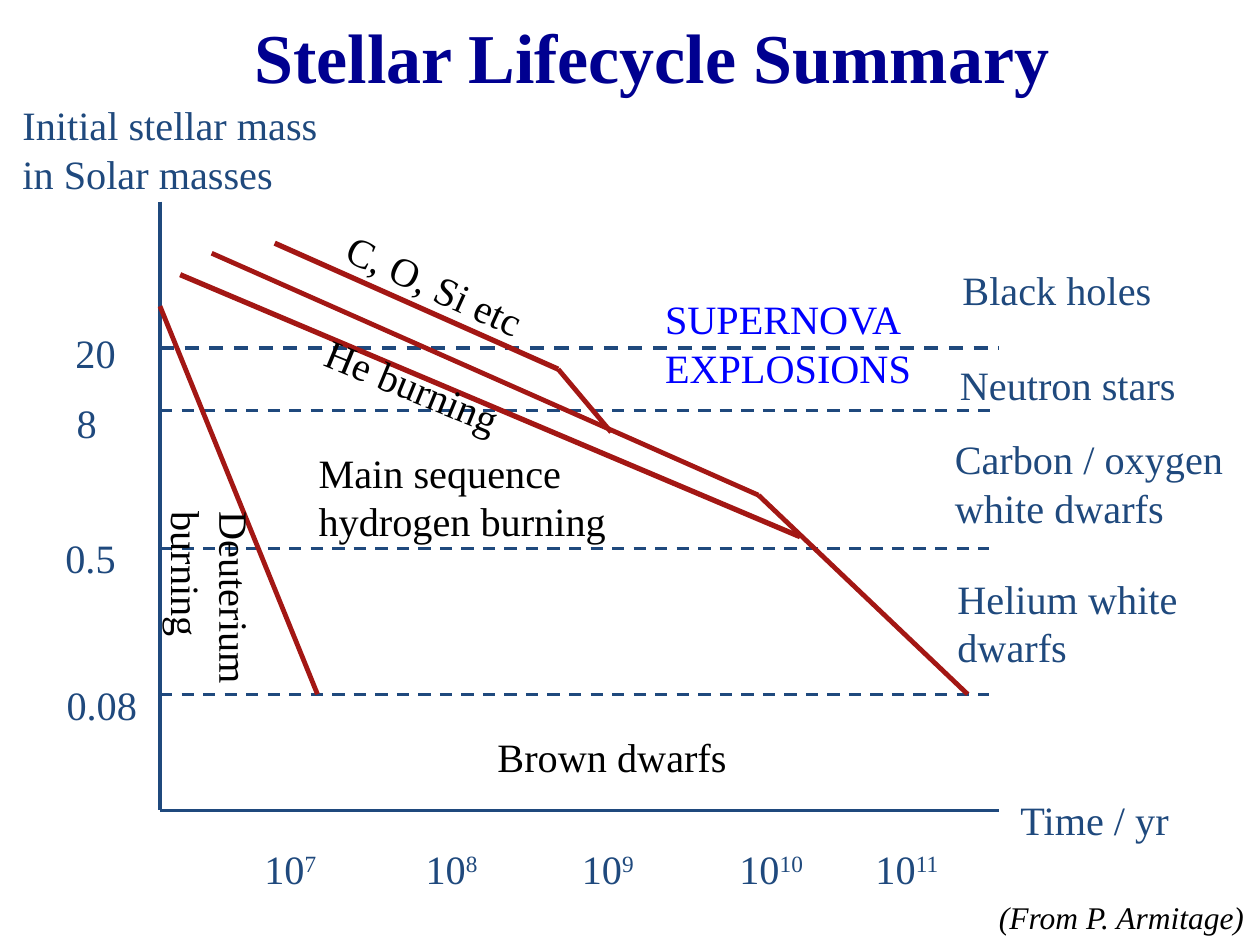
import lxml.etree
import pptx
import pptx.dml.color
import pptx.enum.dml
import pptx.enum.shapes
import pptx.enum.text
import pptx.oxml.ns
import pptx.util

Inches = pptx.util.Inches
FONT = "Times New Roman"
NAVY, BLUE, RED = "000090", "1F497D", "A31714"
BLACK, BRIGHT_BLUE = "000000", "0000FF"
AXIS_LEFT, AXIS_TOP, AXIS_BOTTOM, AXIS_RIGHT = 1.27, 1.6, 6.43, 7.93
LINE_HEIGHT, TWO_LINES = 0.49, 0.88

# label, left, top, width, y and right end of the dashed line, line width
MASS_LIMITS = [
    ("0.08", 0.43, 5.35, 0.77, 5.51, 7.85, 1.75),
    ("0.5", 0.42, 4.18, 0.61, 4.35, 7.85, 1.75),
    ("8", 0.51, 3.11, 0.36, 3.26, AXIS_RIGHT, 1.75),
    ("20", 0.5, 2.56, 0.52, 2.76, AXIS_RIGHT, 2),
]
# exponent of the year, left, width
TIME_TICKS = [("7", 2, 0.64), ("8", 3.28, 0.63), ("9", 4.52, 0.63),
              ("10", 5.77, 0.74), ("11", 6.85, 0.73)]
# start, end, line width
BURNING_LIMITS = [
    ((2.52, 5.51), (AXIS_LEFT, 2.43), 2.75),
    ((7.68, 5.51), (6.02, 3.93), 2.75),
    ((6.35, 4.26), (1.43, 2.18), 3),
    ((6.02, 3.93), (1.68, 2.01), 2.75),
    ((4.85, 3.43), (4.43, 2.93), 2.75),
    ((4.43, 2.93), (2.18, 1.93), 3),
]
# text, left, top, width, height, colour, rotation
LABELS = [
    ("Brown dwarfs", 3.85, 5.76, 2.04, LINE_HEIGHT, BLACK, 0),
    ("Deuterium\nburning", 0.88, 4.31, 1.58, TWO_LINES, BLACK, 90),
    ("Main sequence\nhydrogen burning", 2.43, 3.51, 2.5, TWO_LINES, BLACK, 0),
    ("He burning", 2.45, 2.82, 1.66, LINE_HEIGHT, BLACK, 22.3),
    ("C, O, Si etc", 2.61, 2.02, 1.7, LINE_HEIGHT, BLACK, 24.4),
    ("Carbon / oxygen\nwhite dwarfs", 7.48, 3.4, 2.36, TWO_LINES, BLUE, 0),
    ("Helium white\ndwarfs", 7.5, 4.51, 1.97, TWO_LINES, BLUE, 0),
    ("Neutron stars", 7.52, 2.81, 1.93, LINE_HEIGHT, BLUE, 0),
    ("Black holes", 7.54, 2.06, 1.72, LINE_HEIGHT, BLUE, 0),
    ("Initial stellar mass\nin Solar masses", 0.08, 0.75, 2.57, TWO_LINES, BLUE, 0),
    ("Time / yr", 8, 6.26, 1.39, LINE_HEIGHT, BLUE, 0),
    ("SUPERNOVA\vEXPLOSIONS", 5.18, 2.29, 2.17, TWO_LINES, BRIGHT_BLUE, 0),
]


def rgb(colour):
    return pptx.dml.color.RGBColor.from_string(colour)


def format_text(text_frame, size, colour, bold=False, italic=False):
    text_frame.word_wrap = False
    text_frame.auto_size = pptx.enum.text.MSO_AUTO_SIZE.SHAPE_TO_FIT_TEXT
    text_frame.vertical_anchor = pptx.enum.text.MSO_ANCHOR.TOP
    for paragraph in text_frame.paragraphs:
        paragraph.alignment = pptx.enum.text.PP_ALIGN.LEFT
        for run in paragraph.runs:
            run.font.name = FONT
            run.font.size = pptx.util.Pt(size)
            run.font.bold = bold
            run.font.italic = italic
            run.font.color.rgb = rgb(colour)


def add_title(slide, text):
    title = slide.shapes.title
    title.left, title.top = Inches(1.92), Inches(0.06)
    title.width, title.height = Inches(6.58), Inches(0.77)
    title.text_frame.text = text
    format_text(title.text_frame, 40, NAVY, bold=True)


def add_label(slide, text, left, top, width, height=LINE_HEIGHT, colour=BLUE,
              rotation=0, size=23, italic=False):
    label = slide.shapes.add_textbox(Inches(left), Inches(top), Inches(width), Inches(height))
    label.rotation = rotation
    label.text_frame.text = text
    format_text(label.text_frame, size, colour, italic=italic)
    return label


def add_power_of_ten(slide, exponent, left, width):
    label = add_label(slide, "10", left, 6.65, width)
    superscript = label.text_frame.paragraphs[0].add_run()
    superscript.text = exponent
    format_text(label.text_frame, 23, BLUE)
    superscript.font._element.set("baseline", "30000")


def add_line(slide, start, end, colour, width, dashed=False):
    line = slide.shapes.add_connector(
        pptx.enum.shapes.MSO_CONNECTOR.STRAIGHT,
        *(Inches(coordinate) for coordinate in start + end))
    line.line.color.rgb = rgb(colour)
    line.line.width = pptx.util.Pt(width)
    if dashed:
        line.line.dash_style = pptx.enum.dml.MSO_LINE.DASH
    lxml.etree.SubElement(line._element.spPr, pptx.oxml.ns.qn("a:effectLst"))


def main():
    presentation = pptx.Presentation()
    presentation.slide_width, presentation.slide_height = Inches(10), Inches(7.5)
    slide = presentation.slides.add_slide(presentation.slide_layouts[5])

    add_title(slide, "Stellar Lifecycle Summary")
    add_label(slide, "(From P. Armitage)", 7.83, 7.08, 2.25, 0.4, BLACK, size=18, italic=True)

    origin = (AXIS_LEFT, AXIS_BOTTOM)
    add_line(slide, (AXIS_LEFT, AXIS_TOP), origin, BLUE, 1.75)
    add_line(slide, origin, (AXIS_RIGHT, AXIS_BOTTOM), BLUE, 1.75)
    for mass, left, top, width, y, right, weight in MASS_LIMITS:
        add_label(slide, mass, left, top, width)
        add_line(slide, (AXIS_LEFT, y), (right, y), BLUE, weight, dashed=True)
    for tick in TIME_TICKS:
        add_power_of_ten(slide, *tick)
    for start, end, weight in BURNING_LIMITS:
        add_line(slide, start, end, RED, weight)
    for label in LABELS:
        add_label(slide, *label)

    presentation.save("out.pptx")


if __name__ == "__main__":
    main()
